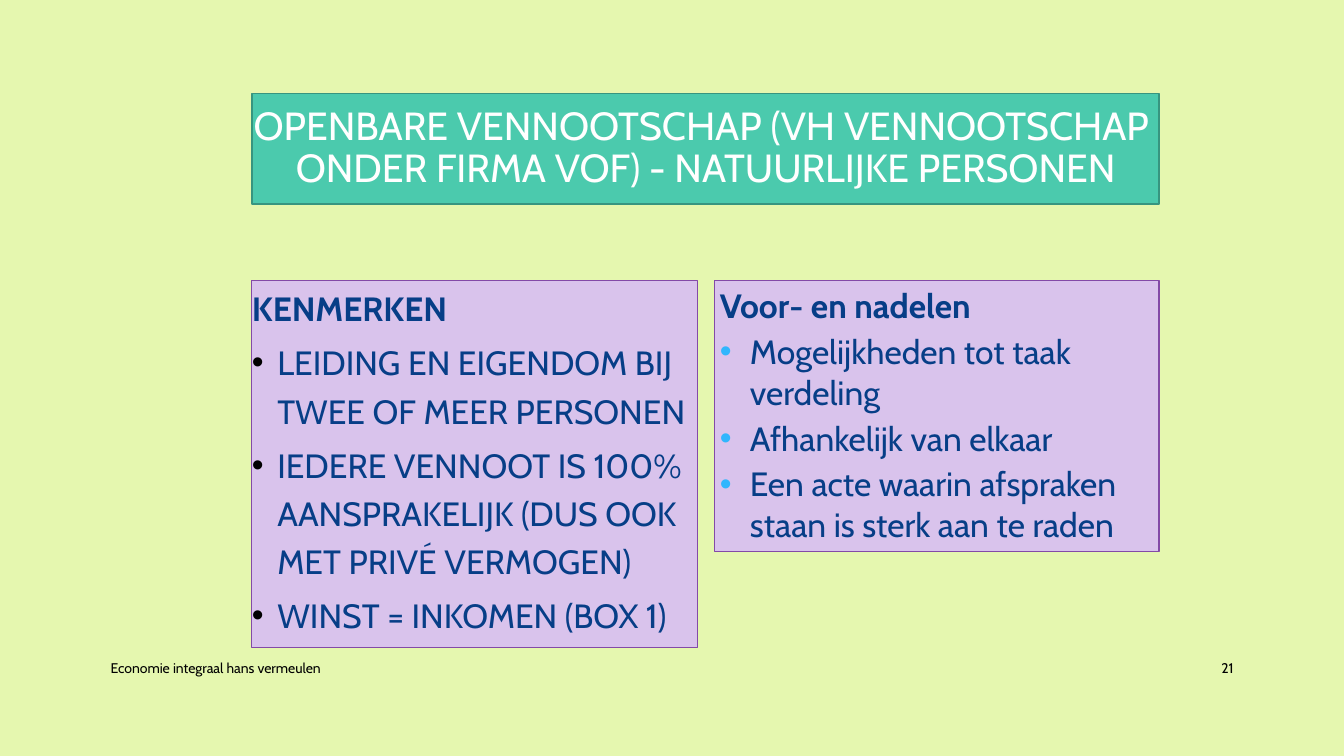
from lxml import etree
from pptx import Presentation
from pptx.dml.color import RGBColor
from pptx.enum.shapes import MSO_SHAPE
from pptx.enum.text import MSO_ANCHOR, PP_ALIGN
from pptx.oxml.ns import qn
from pptx.util import Cm, Pt

RECT = MSO_SHAPE.RECTANGLE
TOP, MIDDLE = MSO_ANCHOR.TOP, MSO_ANCHOR.MIDDLE
LEFT, CENTER, RIGHT = PP_ALIGN.LEFT, PP_ALIGN.CENTER, PP_ALIGN.RIGHT

FONT = "Cabin"
LIME = RGBColor(0xE5, 0xF7, 0xAF)
TEAL = RGBColor(0x4B, 0xCA, 0xAD)
DARK_TEAL = RGBColor(0x37, 0x95, 0x80)
LILAC = RGBColor(0xD9, 0xC3, 0xEC)
PURPLE = RGBColor(0x83, 0x4A, 0xA7)
NAVY = RGBColor(0x07, 0x3E, 0x87)
SKY = RGBColor(0x31, 0xB6, 0xFD)
BLACK = RGBColor(0, 0, 0)
WHITE = RGBColor(0xFF, 0xFF, 0xFF)

FEATURES = [
    "KENMERKEN",
    "LEIDING EN EIGENDOM BIJ TWEE OF MEER PERSONEN",
    "IEDERE VENNOOT IS 100% AANSPRAKELIJK (DUS OOK MET PRIVÉ VERMOGEN)",
    "WINST = INKOMEN (BOX 1)",
]
PROS_AND_CONS = [
    "Voor- en nadelen",
    "Mogelijkheden tot taak verdeling",
    "Afhankelijk van elkaar",
    "Een acte waarin afspraken staan is sterk aan te raden",
]


def set_font(p, size, color, bold=False):
    for r in p.runs:
        r.font.name = FONT
        r.font.size = Pt(size)
        r.font.bold = bold
        r.font.color.rgb = color


def set_frame(tf, anchor, inset):
    tf.word_wrap = True
    tf.vertical_anchor = anchor
    tf.margin_left = tf.margin_right = Cm(inset)
    tf.margin_top = tf.margin_bottom = Cm(inset)


def add_panel(s, left, top, width, height, fill, line, line_width):
    sp = s.shapes.add_shape(RECT, Cm(left), Cm(top), Cm(width), Cm(height))
    sp.shadow.inherit = False
    sp.fill.solid()
    sp.fill.fore_color.rgb = fill
    sp.line.color.rgb = line
    sp.line.width = Pt(line_width)
    return sp


def add_title(s, text):
    sp = add_panel(s, 6.35, 2.36, 22.86, 2.79, TEAL, DARK_TEAL, 1.25)
    tf = sp.text_frame
    set_frame(tf, MIDDLE, 0)
    tf.text = text
    p = tf.paragraphs[0]
    p.alignment = CENTER
    p.line_spacing = 0.9
    set_font(p, 28, WHITE)


def set_hanging(p, indent, bullet_color=None):
    """Hang the paragraph, with a bullet when a bullet colour is given."""
    pPr = p._p.get_or_add_pPr()
    pPr.set("marL", str(Cm(indent)))
    pPr.set("indent", str(-Cm(indent)))
    if bullet_color is None:
        etree.SubElement(pPr, qn("a:buNone"))
        return
    color = etree.SubElement(pPr, qn("a:buClr"))
    etree.SubElement(color, qn("a:srgbClr")).set("val", str(bullet_color))
    etree.SubElement(pPr, qn("a:buFont")).set("typeface", "Arial")
    etree.SubElement(pPr, qn("a:buChar")).set("char", "•")


def add_list(s, left, width, height, lines, inset, indent, spacing, bullet_color):
    """Add a panel with a bold heading (first line) above bullets."""
    sp = add_panel(s, left, 7.06, width, height, LILAC, PURPLE, 0.75)
    tf = sp.text_frame
    set_frame(tf, TOP, inset)
    tf.text = "\n".join(lines)
    for i, p in enumerate(tf.paragraphs):
        set_hanging(p, indent, bullet_color if i else None)
        p.alignment = LEFT
        p.line_spacing = spacing
        p.space_before = Pt(4 if i else 0)
        set_font(p, 24, NAVY, bold=i == 0)


def add_footer(s, left, width, text, align):
    tf = s.shapes.add_textbox(Cm(left), Cm(16.33), Cm(width), Cm(1.02)).text_frame
    set_frame(tf, MIDDLE, 0.25)
    tf.text = text
    p = tf.paragraphs[0]
    p.alignment = align
    set_font(p, 10, BLACK)


def main():
    prs = Presentation()
    prs.slide_width, prs.slide_height = Cm(33.87), Cm(19.05)
    s = prs.slides.add_slide(prs.slide_layouts[6])
    s.background.fill.solid()
    s.background.fill.fore_color.rgb = LIME

    add_footer(s, 2.54, 18.54, "Economie integraal hans vermeulen", LEFT)
    add_footer(s, 29.21, 2.13, "21", RIGHT)
    add_title(s, "OPENBARE VENNOOTSCHAP (VH VENNOOTSCHAP \v"
                 "ONDER FIRMA VOF) - NATUURLIJKE PERSONEN")
    add_list(s, 6.35, 11.23, 9.27, FEATURES, 0, 0.64, 1.2, BLACK)
    add_list(s, 18.01, 11.2, 6.83, PROS_AND_CONS, 0.13, 0.76, 1.0, SKY)
    prs.save("out.pptx")


if __name__ == "__main__":
    main()
